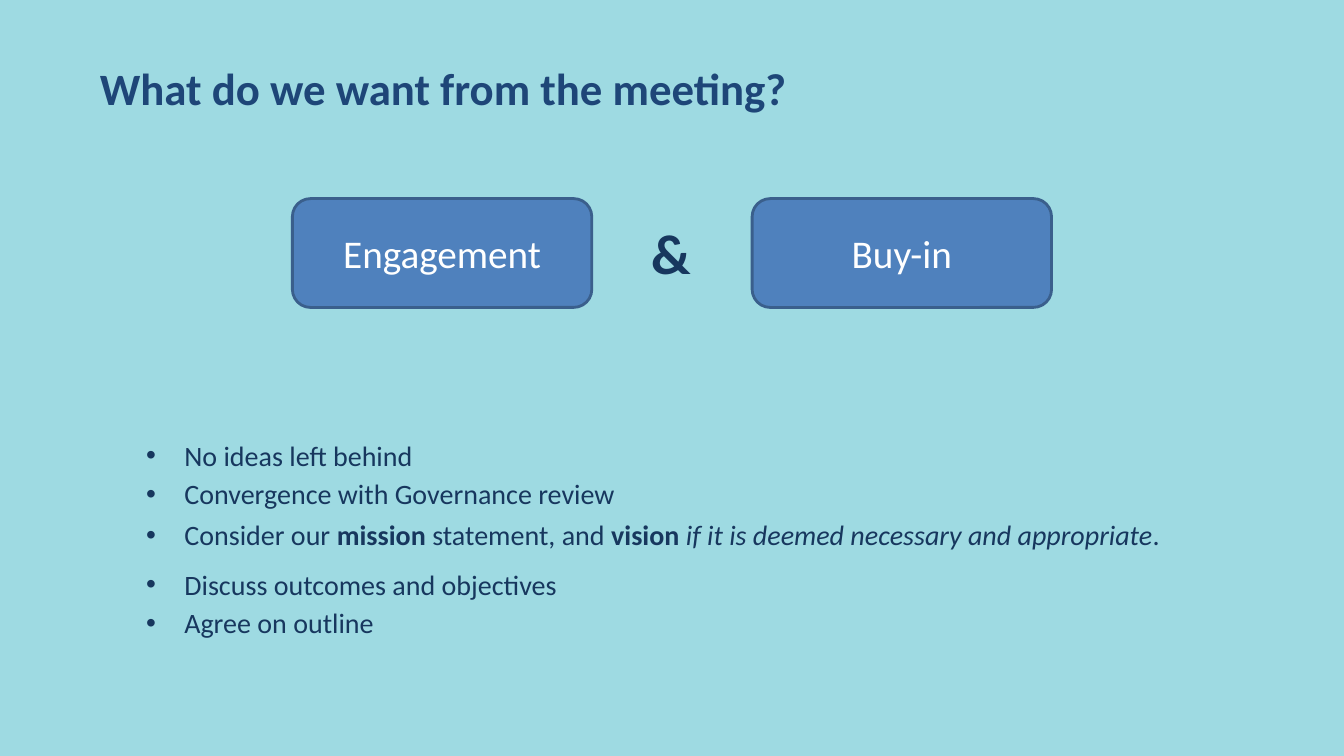
import pptx
import pptx.dml.color
import pptx.enum.shapes
import pptx.enum.text
import pptx.oxml
import pptx.util
from pptx.dml.color import RGBColor
from pptx.util import Inches

BACKGROUND = RGBColor(0x9E, 0xDA, 0xE2)
TITLE_BLUE = RGBColor(0x1E, 0x46, 0x78)
NAVY = RGBColor(0x17, 0x37, 0x5E)
BOX_BLUE = RGBColor(0x4F, 0x81, 0xBD)
BOX_EDGE = RGBColor(0x3A, 0x5F, 0x8C)
WHITE = RGBColor(0xFF, 0xFF, 0xFF)

POINTS = [
    [("No ideas left behind", "")],
    [("Convergence with Governance review", "")],
    [
        ("Consider our ", ""),
        ("mission ", "b"),
        ("statement, and ", ""),
        ("vision ", "b"),
        ("if it is deemed necessary and appropriate", "i"),
        (".", ""),
    ],
    [("Discuss outcomes and objectives", "")],
    [("Agree on outline", "")],
]
MISSION_POINT = 2


def style_run(r, size, color, bold=False, italic=False):
    """Format one run in the slide's font."""
    r.font.name = "Calibri"
    r.font.size = pptx.util.Pt(size)
    r.font.color.rgb = color
    r.font.bold = bold
    r.font.italic = italic


def add_title(s, left, top, width, height):
    """Place and format the title placeholder."""
    sp = s.shapes.title
    sp.left, sp.top = Inches(left), Inches(top)
    sp.width, sp.height = Inches(width), Inches(height)
    tf = sp.text_frame
    tf.text = "What do we want from the meeting?"
    tf.vertical_anchor = pptx.enum.text.MSO_ANCHOR.TOP
    tf.paragraphs[0].alignment = pptx.enum.text.PP_ALIGN.LEFT
    style_run(tf.paragraphs[0].runs[0], 32, TITLE_BLUE, bold=True)


def add_goal_box(shapes, label, left, top, width, height):
    """Draw one rounded box with a centred label."""
    kind = pptx.enum.shapes.MSO_SHAPE.FLOWCHART_ALTERNATE_PROCESS
    sp = shapes.add_shape(kind, Inches(left), Inches(top), Inches(width), Inches(height))
    sp.shadow.inherit = False
    sp.fill.solid()
    sp.fill.fore_color.rgb = BOX_BLUE
    sp.line.color.rgb = BOX_EDGE
    sp.line.width = pptx.util.Pt(2)
    tf = sp.text_frame
    tf.text = label
    tf.vertical_anchor = pptx.enum.text.MSO_ANCHOR.MIDDLE
    p = tf.paragraphs[0]
    p.alignment = pptx.enum.text.PP_ALIGN.CENTER
    style_run(p.runs[0], 28, WHITE)


def add_goals(s, left, top, width, height):
    """Draw the two goals at the ends of the band, joined by an ampersand."""
    shapes = s.shapes.add_group_shape().shapes
    box_width = 2.97
    add_goal_box(shapes, "Engagement", left, top, box_width, height)
    add_goal_box(shapes, "Buy-in", left + width - box_width, top, box_width, height)
    sp = shapes.add_textbox(
        Inches(left + width / 2 - 0.3), Inches(top + 0.15), Inches(0.6), Inches(0.77)
    )
    tf = sp.text_frame
    tf.text = "&"
    tf.word_wrap = True
    style_run(tf.paragraphs[0].runs[0], 40, NAVY, bold=True)


def add_points(s, left, top, width, height):
    """Write the bulleted list of meeting aims."""
    sp = s.shapes.add_textbox(Inches(left), Inches(top), Inches(width), Inches(height))
    tf = sp.text_frame
    tf.word_wrap = True
    for i, point in enumerate(POINTS):
        p = tf.paragraphs[0] if i == 0 else tf.add_paragraph()
        if i > 0:
            p.space_before = pptx.util.Pt(3.5)
        if i == MISSION_POINT:
            p.line_spacing = 1.07
            p.space_after = pptx.util.Pt(8)
        pPr = p._p.get_or_add_pPr()
        pPr.set("marL", str(Inches(0.38)))
        pPr.set("indent", str(Inches(-0.38)))
        for tag, key, value in (("buFont", "typeface", "Arial"), ("buChar", "char", "•")):
            bullet = pptx.oxml.xmlchemy.OxmlElement(f"a:{tag}")
            bullet.set(key, value)
            pPr.append(bullet)
        for text, style in point:
            r = p.add_run()
            r.text = text
            style_run(r, 20, NAVY, bold=style == "b", italic=style == "i")


def main():
    """Build and save the slide."""
    prs = pptx.Presentation()
    prs.slide_width, prs.slide_height = Inches(13.33), Inches(7.5)
    s = prs.slides.add_slide(prs.slide_layouts[5])
    s.background.fill.solid()
    s.background.fill.fore_color.rgb = BACKGROUND
    add_title(s, 0.89, 0.55, 9.32, 0.91)
    add_points(s, 1.35, 4.3, 10.62, 2.15)
    add_goals(s, 2.9, 1.97, 7.53, 1.08)
    prs.save("out.pptx")


if __name__ == "__main__":
    main()
